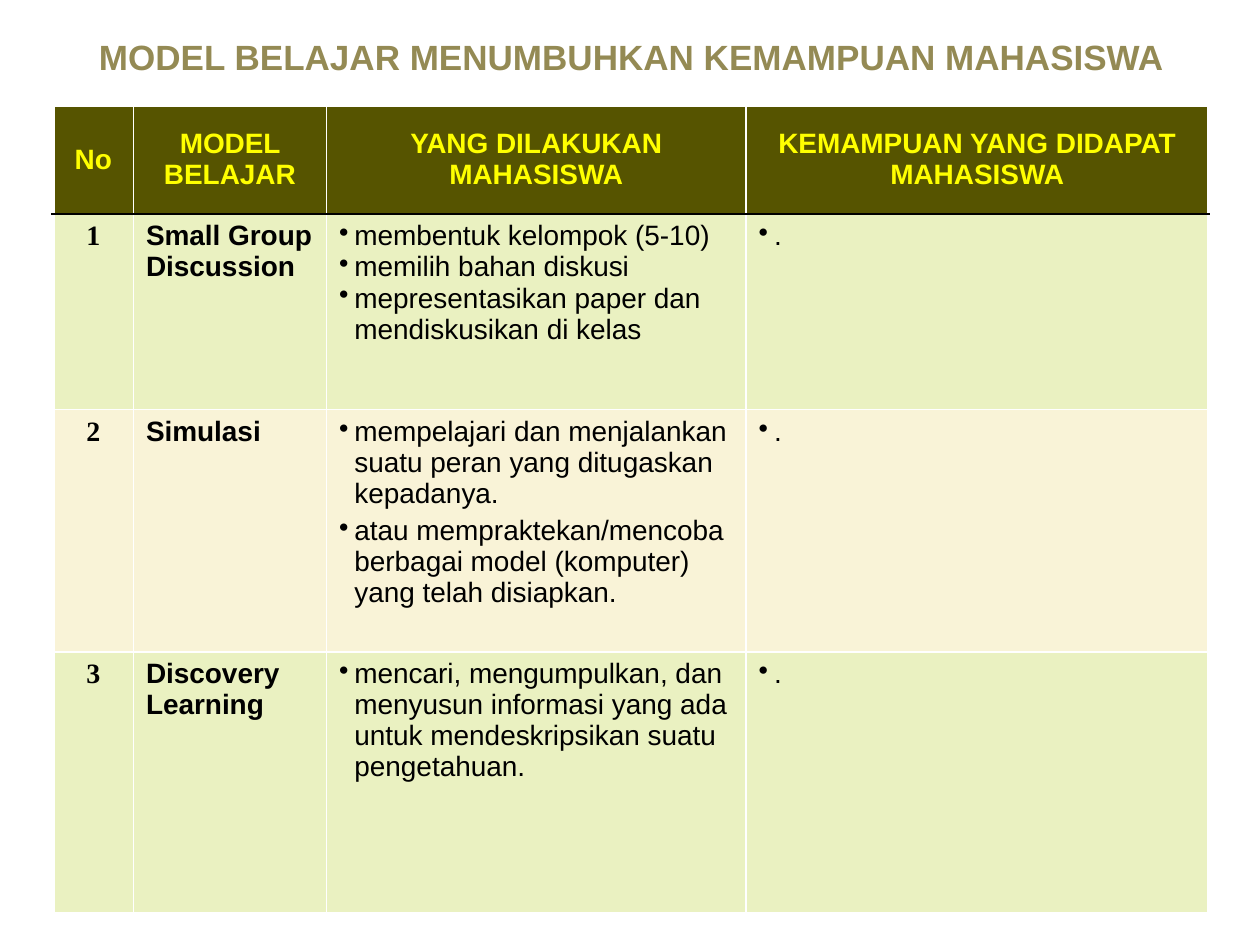
from dataclasses import dataclass

from lxml.etree import SubElement
from pptx import Presentation
from pptx.dml.color import RGBColor
from pptx.enum.text import MSO_ANCHOR, MSO_AUTO_SIZE, PP_ALIGN
from pptx.oxml import parse_xml
from pptx.oxml.ns import nsdecls, qn
from pptx.util import Cm, Pt


@dataclass(frozen=True)
class Theme:
    title: str = "948A54"
    head: str = "565400"
    label: str = "FFFF00"
    ink: str = "000000"
    line: str = "FFFFFF"
    bands: tuple = ("EAF1C1", "F9F3D7")
    sans: str = "Arial"
    serif: str = "Times New Roman"
    big: int = 20
    body: int = 16
    thin: float = 1
    rule: float = 1.5
    edge: float = 2.25


THEME = Theme()
TITLE = "MODEL BELAJAR MENUMBUHKAN KEMAMPUAN MAHASISWA"
HEADS = ["No", "MODEL BELAJAR", "YANG DILAKUKAN MAHASISWA",
         "KEMAMPUAN YANG DIDAPAT MAHASISWA"]
# Model, student tasks, skills gained, space between bullets in points
MODELS = [
    ("Small Group Discussion",
     ["membentuk kelompok (5-10)", "memilih bahan diskusi",
      "mepresentasikan paper dan mendiskusikan di kelas"], ["."], 0),
    ("Simulasi",
     ["mempelajari dan menjalankan suatu peran yang ditugaskan kepadanya.",
      "atau mempraktekan/mencoba berbagai model (komputer) yang telah "
      "disiapkan."], ["."], 3.2),
    ("Discovery Learning",
     ["mencari, mengumpulkan, dan menyusun informasi yang ada untuk "
      "mendeskripsikan suatu pengetahuan."], ["."], 3.2),
]
WIDTHS = [1.62, 3.89, 8.46, 9.32]
HEIGHTS = [2.2, 3.94, 4.88, 5.28]


def add_run(para, text, color=THEME.ink, size=THEME.body, bold=True,
            face=THEME.sans):
    run = para.add_run()
    run.text = text
    font = run.font
    font.name, font.size, font.bold = face, Pt(size), bold
    font.color.rgb = RGBColor.from_string(color)


def add_title(slide):
    title = slide.shapes.title
    title.left, title.top = Cm(1.4), Cm(0.58)
    title.width, title.height = Cm(22.66), Cm(1.12)
    frame = title.text_frame
    frame.word_wrap = True
    frame.auto_size = MSO_AUTO_SIZE.SHAPE_TO_FIT_TEXT
    frame.vertical_anchor = MSO_ANCHOR.TOP
    para = frame.paragraphs[0]
    para.alignment = PP_ALIGN.CENTER
    add_run(para, TITLE, THEME.title, THEME.big)


def set_lines(cell, row, col):
    """Thick white outside, thin white inside, black rule under the head."""
    last_row, last_col = len(HEIGHTS) - 1, len(WIDTHS) - 1
    white = THEME.line
    rule = (THEME.ink, THEME.rule)
    thin, edge = (white, THEME.thin), (white, THEME.edge)
    sides = {
        "lnL": edge if col == 0 else thin,
        "lnR": edge if col == last_col else thin,
        "lnT": edge if row == 0 else rule if row == 1 else thin,
        "lnB": rule if row == 0 else edge if row == last_row else thin,
    }
    props = cell._tc.get_or_add_tcPr()
    for place, (side, (color, width)) in enumerate(sides.items()):
        props.insert(place, parse_xml(
            f'<a:{side} {nsdecls("a")} w="{Pt(width)}"><a:solidFill>'
            f'<a:srgbClr val="{color}"/></a:solidFill></a:{side}>'))


def add_text(cell, text, align=PP_ALIGN.LEFT, **style):
    para = cell.text_frame.paragraphs[0]
    para.alignment = align
    add_run(para, text, **style)


def add_list(cell, items, gap):
    frame = cell.text_frame
    for place, item in enumerate(items):
        para = frame.add_paragraph() if place else frame.paragraphs[0]
        props = para._p.get_or_add_pPr()
        props.set("marL", str(Cm(0.31)))
        props.set("indent", str(-Cm(0.31)))
        SubElement(props, qn("a:buChar"), char="•")
        if place:
            para.space_before = Pt(gap)
        add_run(para, item, bold=False)


def add_grid(slide):
    frame = slide.shapes.add_table(
        len(HEIGHTS), len(WIDTHS), Cm(1.07), Cm(2.12),
        Cm(sum(WIDTHS)), Cm(sum(HEIGHTS)))
    table = frame.table
    for col, width in zip(table.columns, WIDTHS):
        col.width = Cm(width)
    for row, height in zip(table.rows, HEIGHTS):
        row.height = Cm(height)

    # Fills and borders
    for r in range(len(HEIGHTS)):
        color = THEME.bands[(r - 1) % 2] if r else THEME.head
        for c in range(len(WIDTHS)):
            cell = table.cell(r, c)
            cell.fill.solid()
            cell.fill.fore_color.rgb = RGBColor.from_string(color)
            set_lines(cell, r, c)

    # Head row
    for c, head in enumerate(HEADS):
        cell = table.cell(0, c)
        cell.vertical_anchor = MSO_ANCHOR.MIDDLE
        add_text(cell, head, PP_ALIGN.CENTER, color=THEME.label)

    # One row for each learning model
    for r, (model, tasks, skills, gap) in enumerate(MODELS, 1):
        add_text(table.cell(r, 0), str(r), PP_ALIGN.CENTER, face=THEME.serif)
        add_text(table.cell(r, 1), model)
        add_list(table.cell(r, 2), tasks, gap)
        add_list(table.cell(r, 3), skills, gap)


def main():
    deck = Presentation()
    deck.slide_width, deck.slide_height = Cm(25.4), Cm(19.05)
    slide = deck.slides.add_slide(deck.slide_layouts[5])
    add_grid(slide)
    add_title(slide)
    deck.save("out.pptx")


if __name__ == "__main__":
    main()
